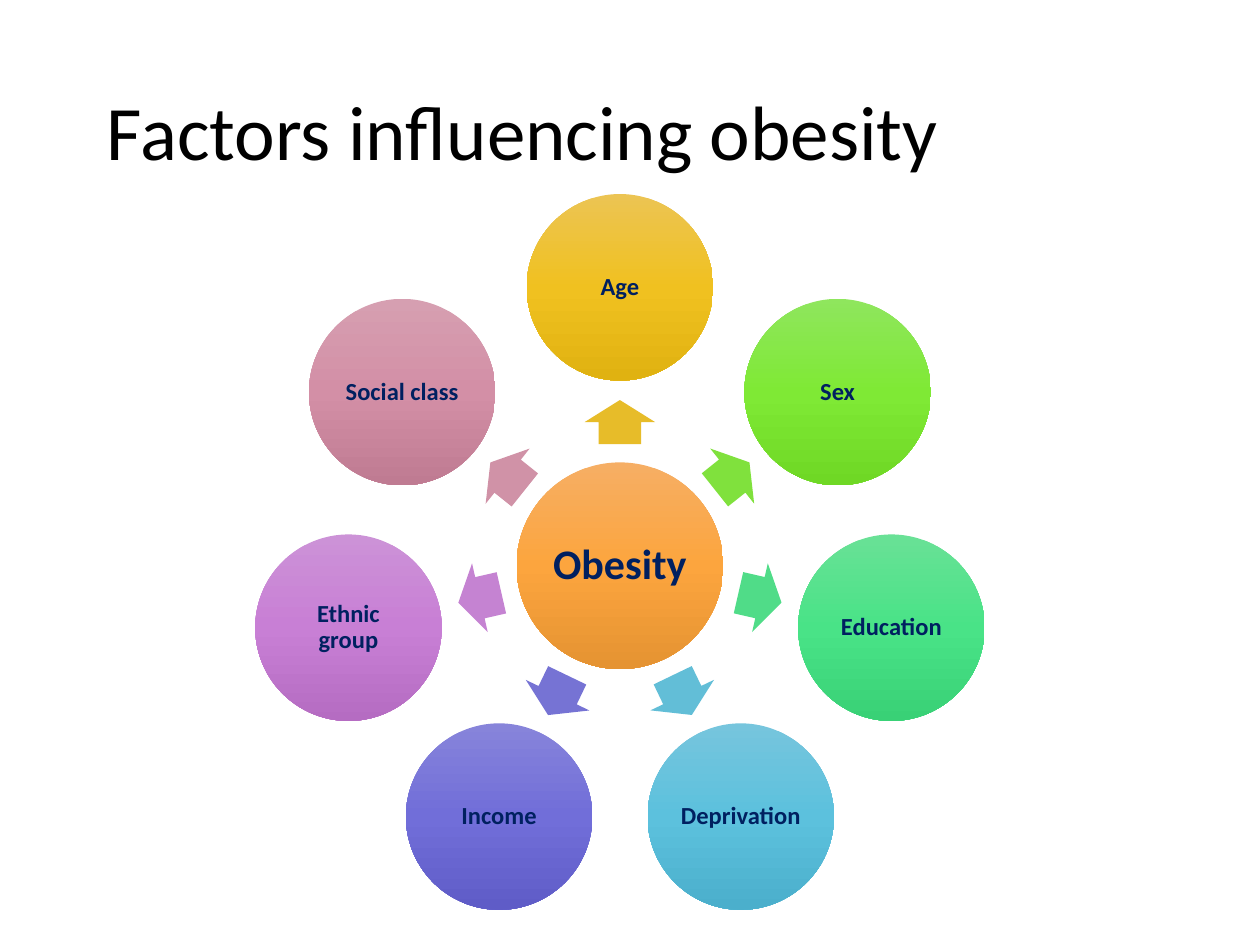
"""Build the slide of a hub circle with seven obesity factors around it."""
from copy import deepcopy
from math import cos, radians, sin

from pptx import Presentation
from pptx.dml.color import RGBColor
from pptx.enum.shapes import MSO_SHAPE
from pptx.enum.text import MSO_ANCHOR, PP_ALIGN
from pptx.oxml.ns import qn
from pptx.util import Inches, Pt

CIRCLE, ARROW = MSO_SHAPE.OVAL, MSO_SHAPE.RIGHT_ARROW
MIDDLE, LEFT, CENTER = MSO_ANCHOR.MIDDLE, PP_ALIGN.LEFT, PP_ALIGN.CENTER
WIDTH, HEIGHT = Inches(10), Inches(7.5)
COLUMNS, ROWS = 100, 75
COLORS = {"title": "000000", "label": "002060"}
HUB = ("Obesity", ("F6AE64", "FCA53E", "E59332"))
FACTORS = [
    ("Age", "E7BC29", ("ECC453", "F0C120", "E0B211")),
    ("Sex", "80E13D", ("8FE65D", "7FE935", "6FD825")),
    ("Education", "50DC88", ("69E196", "49E387", "39D176")),
    ("Deprivation", "62BED7", ("76C5DD", "5CC1DD", "4BAFCC")),
    ("Income", "7673D4", ("8784DA", "716ED9", "5F5CC7")),
    ("Ethnic group", "C583D2", ("CC92D7", "C87FD5", "B56CC2")),
    ("Social class", "D092A7", ("D69FB1", "D38FA6", "BF7B92")),
]
CENTER_COLUMN, CENTER_ROW = 49.2, 44.9
CIRCLE_ORBIT, ARROW_ORBIT = 22.1, 11.4


class Diagram:
    """Hold the text style and the current slide."""

    def __init__(self, page, font):
        self.page, self.font = page, font

    def area(self, column, row, columns, rows):
        """Turn grid cells into slide lengths."""
        across, down = WIDTH / COLUMNS, HEIGHT / ROWS
        return [int(n) for n in (column * across, row * down, columns * across, rows * down)]

    def label(self, box, text, size, color, align, margin, bold=False):
        """Put one formatted paragraph into a box."""
        frame = box.text_frame
        layout = {"word_wrap": True, "vertical_anchor": MIDDLE}
        layout.update({f"margin_{side}": Inches(margin)
                       for side in ("left", "right", "top", "bottom")})
        para = frame.paragraphs[0]
        span = para.add_run()
        span.text = text
        formats = [(frame, layout), (para, {"alignment": align, "line_spacing": 0.9}),
                   (span.font, {"name": self.font, "size": Pt(size), "bold": bold})]
        for target, values in formats:
            for name, value in values.items():
                setattr(target, name, value)
        span.font.color.rgb = RGBColor.from_string(COLORS[color])

    def title(self, text, area):
        """Add the slide title."""
        box = self.page.shapes.add_textbox(*self.area(*area))
        self.label(box, text, 44, "title", LEFT, 0.1)

    def shape(self, kind, column, row, columns, rows):
        """Add a plain shape centred on a grid point."""
        area = self.area(column - columns / 2, row - rows / 2, columns, rows)
        shape = self.page.shapes.add_shape(kind, *area)
        shape.shadow.inherit = False
        shape.line.fill.background()
        return shape

    def circle(self, column, row, diameter, text, size, tones):
        """Add a labelled circle shaded from top to bottom."""
        circle = self.shape(CIRCLE, column, row, diameter, diameter)
        fill = circle.fill
        fill.gradient()
        fill.gradient_angle = 270
        stops = circle.element.spPr.find(".//" + qn("a:gsLst"))
        stops.append(deepcopy(stops[0]))
        for stop, tone, position in zip(fill.gradient_stops, tones, (0, 0.5, 1)):
            stop.color.rgb = RGBColor.from_string(tone)
            stop.position = position
        self.label(circle, text, size, "label", CENTER, 0.03, bold=True)

    def arrow(self, column, row, rotation, color):
        """Add a block arrow pointing outwards."""
        arrow = self.shape(ARROW, column, row, 3.5, 5.6)
        arrow.rotation = rotation
        arrow.adjustments[0], arrow.adjustments[1] = 0.6, 0.5
        arrow.fill.solid()
        arrow.fill.fore_color.rgb = RGBColor.from_string(color)


def orbit(radius, angle):
    """Find the grid point at an angle around the hub."""
    turn = radians(angle)
    return CENTER_COLUMN + radius * cos(turn), CENTER_ROW + radius * sin(turn)


def main():
    """Build and save the deck."""
    deck = Presentation()
    deck.slide_width, deck.slide_height = WIDTH, HEIGHT
    diagram = Diagram(deck.slides.add_slide(deck.slide_layouts[6]), "Calibri")
    diagram.title("Factors influencing obesity", (7.5, 2, 85, 17.5))
    hub_text, hub_tones = HUB
    diagram.circle(CENTER_COLUMN, CENTER_ROW, 16.4, hub_text, 24, hub_tones)
    for index, (text, color, tones) in enumerate(FACTORS):
        angle = index * 360 / len(FACTORS) - 90
        diagram.arrow(*orbit(ARROW_ORBIT, angle), angle % 360, color)
        diagram.circle(*orbit(CIRCLE_ORBIT, angle), 14.8, text, 14, tones)
    deck.save("out.pptx")


if __name__ == "__main__":
    main()
